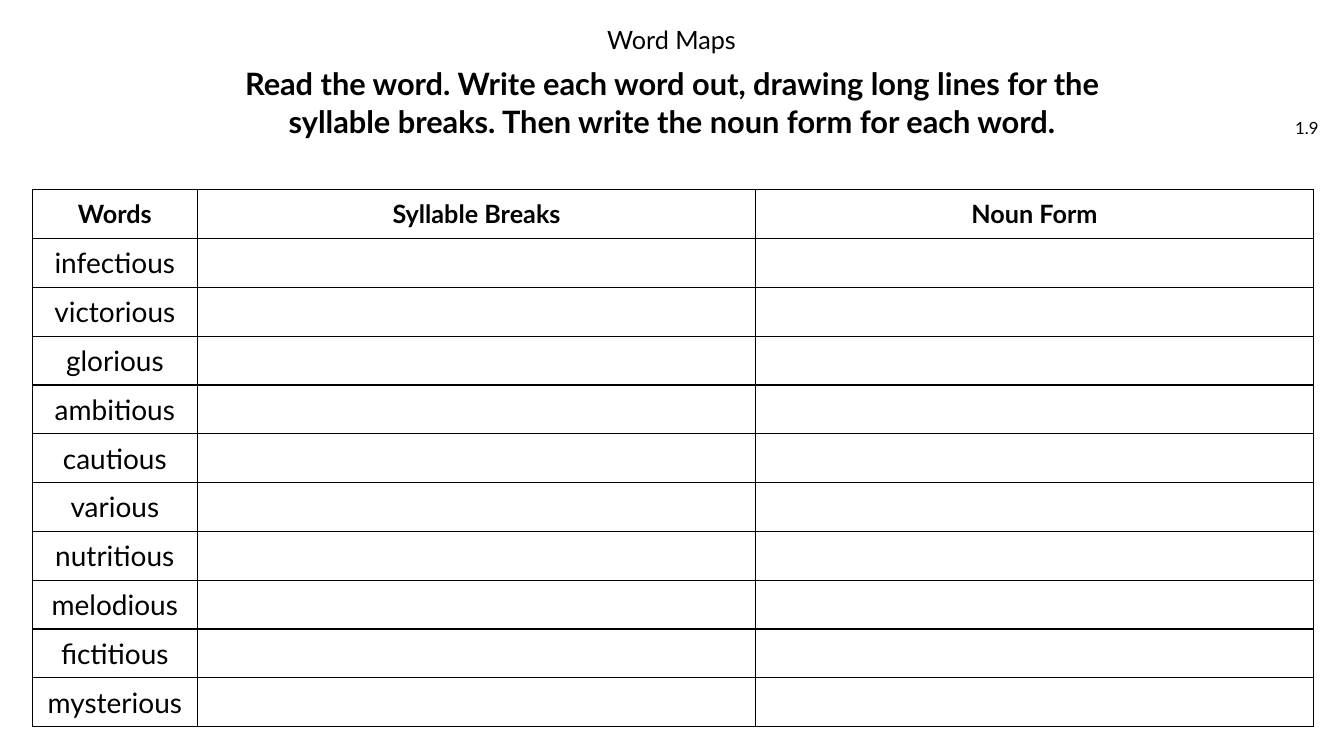
from lxml import etree
from pptx import Presentation
from pptx.dml.color import RGBColor
from pptx.enum.text import MSO_ANCHOR, PP_ALIGN
from pptx.oxml.ns import qn
from pptx.util import Cm, Pt

CENTER, RIGHT = PP_ALIGN.CENTER, PP_ALIGN.RIGHT
TOP, MIDDLE = MSO_ANCHOR.TOP, MSO_ANCHOR.MIDDLE

HEADINGS = ["Words", "Syllable Breaks", "Noun Form"]
WORDS = ["infectious", "victorious", "glorious", "ambitious", "cautious",
         "various", "nutritious", "melodious", "fictitious", "mysterious"]


def color(value):
    return RGBColor.from_string(value)


class WordMapPage:
    """Holds the style and the page on which elements are placed."""

    font_name = "Lato"
    ink = "000000"
    paper = "FFFFFF"
    border_width = Pt(1)

    def __init__(self, page):
        self.page = page

    def fill_para(self, para, text, size, bold=False, **layout):
        for name, value in layout.items():
            setattr(para, name, value)
        span = para.add_run()
        span.text = text
        formats = {"name": self.font_name, "size": Pt(size), "bold": bold}
        for name, value in formats.items():
            setattr(span.font, name, value)
        span.font.color.rgb = color(self.ink)

    def add_text(self, place, text, size, anchor=MIDDLE, **formats):
        box = self.page.shapes.add_textbox(*map(Cm, place))
        frame = box.text_frame
        frame.word_wrap = True
        frame.vertical_anchor = anchor
        self.fill_para(frame.paragraphs[0], text, size, **formats)

    def add_borders(self, cell):
        properties = cell._tc.get_or_add_tcPr()
        for position, side in enumerate(("a:lnL", "a:lnR", "a:lnT", "a:lnB")):
            line = etree.Element(qn(side), w=str(self.border_width))
            fill = etree.SubElement(line, qn("a:solidFill"))
            etree.SubElement(fill, qn("a:srgbClr"), val=self.ink)
            properties.insert(position, line)

    def add_table(self, left, top, widths, row_height, rows):
        frame = self.page.shapes.add_table(
            len(rows), len(widths), Cm(left), Cm(top),
            Cm(sum(widths)), Cm(row_height * len(rows)))
        table = frame.table
        table.horz_banding = False
        for column, width in zip(table.columns, widths):
            column.width = Cm(width)
        for row_number, texts in enumerate(rows):
            table.rows[row_number].height = Cm(row_height)
            heading = row_number == 0
            for column_number, text in enumerate(texts):
                cell = table.cell(row_number, column_number)
                cell.vertical_anchor = MIDDLE
                cell.fill.solid()
                cell.fill.fore_color.rgb = color(self.paper)
                self.add_borders(cell)
                if text:
                    self.fill_para(cell.text_frame.paragraphs[0], text,
                                   18 if heading else 20, heading,
                                   alignment=CENTER)


def main():
    deck = Presentation()
    deck.slide_width, deck.slide_height = Cm(33.87), Cm(19.05)
    word_map = WordMapPage(deck.slides.add_slide(deck.slide_layouts[6]))

    word_map.add_text((31.88, 2.72, 1.6, 1.02), "1.9", 12, alignment=RIGHT)
    word_map.add_text((5, 1.52, 23.88, 2.08),
                      "Read the word. Write each word out, drawing long lines for the "
                      "syllable breaks. Then write the noun form for each word.",
                      22, bold=True, alignment=CENTER, line_spacing=Pt(27))
    word_map.add_text((9.7, 0.58, 14.45, 0.89), "Word Maps", 18, anchor=TOP,
                      alignment=CENTER, line_spacing=0.9)
    word_map.add_table(0.81, 4.78, [4.17, 14.06, 14.06], 1.23,
                       [HEADINGS] + [[word, "", ""] for word in WORDS])

    deck.save("out.pptx")


if __name__ == "__main__":
    main()
